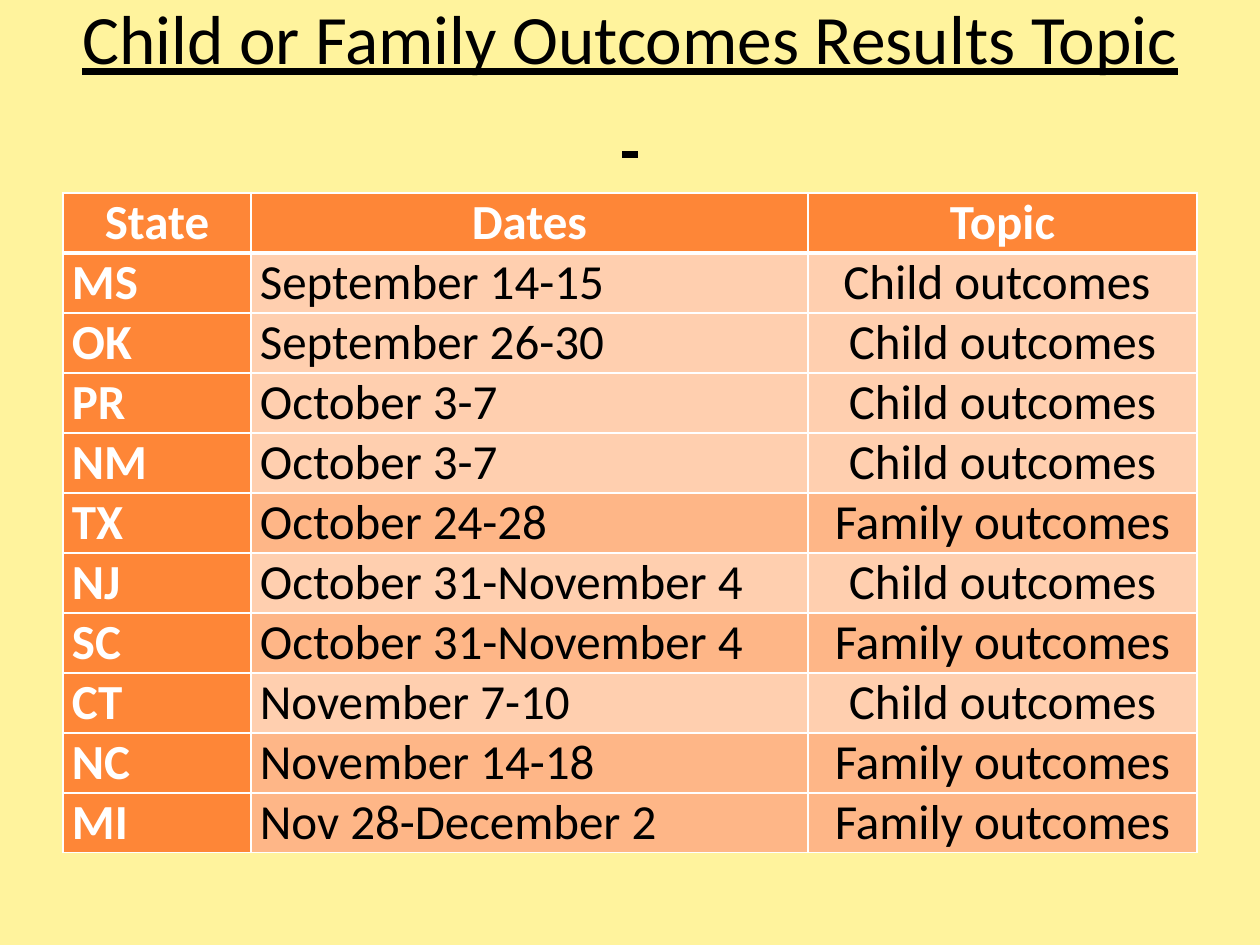
"""Build a slide that lists states, dates and outcome topics in a table."""
from lxml.etree import SubElement
from pptx import Presentation
from pptx.dml.color import RGBColor
from pptx.enum.text import MSO_ANCHOR, PP_ALIGN
from pptx.oxml.ns import qn
from pptx.util import Emu, Pt

FONT = "Calibri"
COLORS = {
    "background": "FFF39D",
    "header": "FE8637",
    "child": "FFCFAF",
    "family": "FEB687",
    "black": "000000",
    "white": "FFFFFF",
}
COLUMN_WIDTHS = [188, 557, 389]
ROW_HEIGHT = 60
HEADINGS = ["State", "Dates", "Topic"]
VISITS = [
    ("MS", "September 14-15", "Child outcomes\N{NO-BREAK SPACE}"),
    ("OK", "September 26-30", "Child outcomes"),
    ("PR", "October 3-7", "Child outcomes"),
    ("NM", "October 3-7", "Child outcomes"),
    ("TX", "October 24-28", "Family outcomes"),
    ("NJ", "October 31-November 4", "Child outcomes"),
    ("SC", "October 31-November 4", "Family outcomes"),
    ("CT", "November 7-10", "Child outcomes"),
    ("NC", "November 14-18", "Family outcomes"),
    ("MI", "Nov 28-December 2", "Family outcomes"),
]


def px(length):
    return Emu(round(length * 914400 / 126))


def rgb(name):
    return RGBColor.from_string(COLORS[name])


def write_text(text_frame, text, size, color, align, bold=False, underline=False):
    text_frame.text = text
    paragraph = text_frame.paragraphs[0]
    paragraph.alignment = align
    for run in paragraph.runs:
        run.font.name = FONT
        run.font.size = Pt(size)
        run.font.color.rgb = rgb(color)
        run.font.bold = bold
        run.font.underline = underline


def add_title(slide, text):
    shape = slide.shapes.add_textbox(px(63), px(0), px(1134), px(157))
    text_frame = shape.text_frame
    text_frame.word_wrap = True
    text_frame.vertical_anchor = MSO_ANCHOR.MIDDLE
    write_text(text_frame, text, 39.6, "black", PP_ALIGN.CENTER, underline=True)


def set_borders(cell, widths):
    properties = cell._tc.get_or_add_tcPr()
    for index, (side, width) in enumerate(widths.items()):
        line = SubElement(properties, qn(f"a:ln{side}"), w=str(Pt(width)))
        fill = SubElement(line, qn("a:solidFill"))
        SubElement(fill, qn("a:srgbClr"), val=COLORS["white"])
        properties.insert(index, line)


def format_cell(cell, text, row, column, topic):
    is_heading = row == 0 or column == 0
    is_centered = row == 0 or column == 2
    cell.margin_left = cell.margin_right = px(9)
    cell.margin_top = cell.margin_bottom = 0
    cell.fill.solid()
    topic_color = "family" if topic.startswith("Family") else "child"
    cell.fill.fore_color.rgb = rgb("header" if is_heading else topic_color)
    write_text(
        cell.text_frame, text, 28,
        "white" if is_heading else "black",
        PP_ALIGN.CENTER if is_centered else PP_ALIGN.LEFT,
        bold=is_heading,
    )
    set_borders(cell, {
        "L": 1,
        "R": 1,
        "T": 3 if row == 1 else 1,
        "B": 3 if row == 0 else 1,
    })


def add_visits_table(slide):
    rows = [HEADINGS, *VISITS]
    frame = slide.shapes.add_table(
        len(rows), len(HEADINGS), px(63), px(193),
        px(sum(COLUMN_WIDTHS)), px(ROW_HEIGHT * len(rows)),
    )
    table = frame.table
    for column, width in zip(table.columns, COLUMN_WIDTHS):
        column.width = px(width)
    for row, texts in enumerate(rows):
        table.rows[row].height = px(ROW_HEIGHT)
        for column, text in enumerate(texts):
            format_cell(table.cell(row, column), text, row, column, texts[-1])


def main():
    presentation = Presentation()
    presentation.slide_width = px(1260)
    presentation.slide_height = px(945)
    slide = presentation.slides.add_slide(presentation.slide_layouts[6])
    slide.background.fill.solid()
    slide.background.fill.fore_color.rgb = rgb("background")
    add_title(slide, "Child or Family Outcomes Results Topic\v ")
    add_visits_table(slide)
    presentation.save("out.pptx")


if __name__ == "__main__":
    main()
